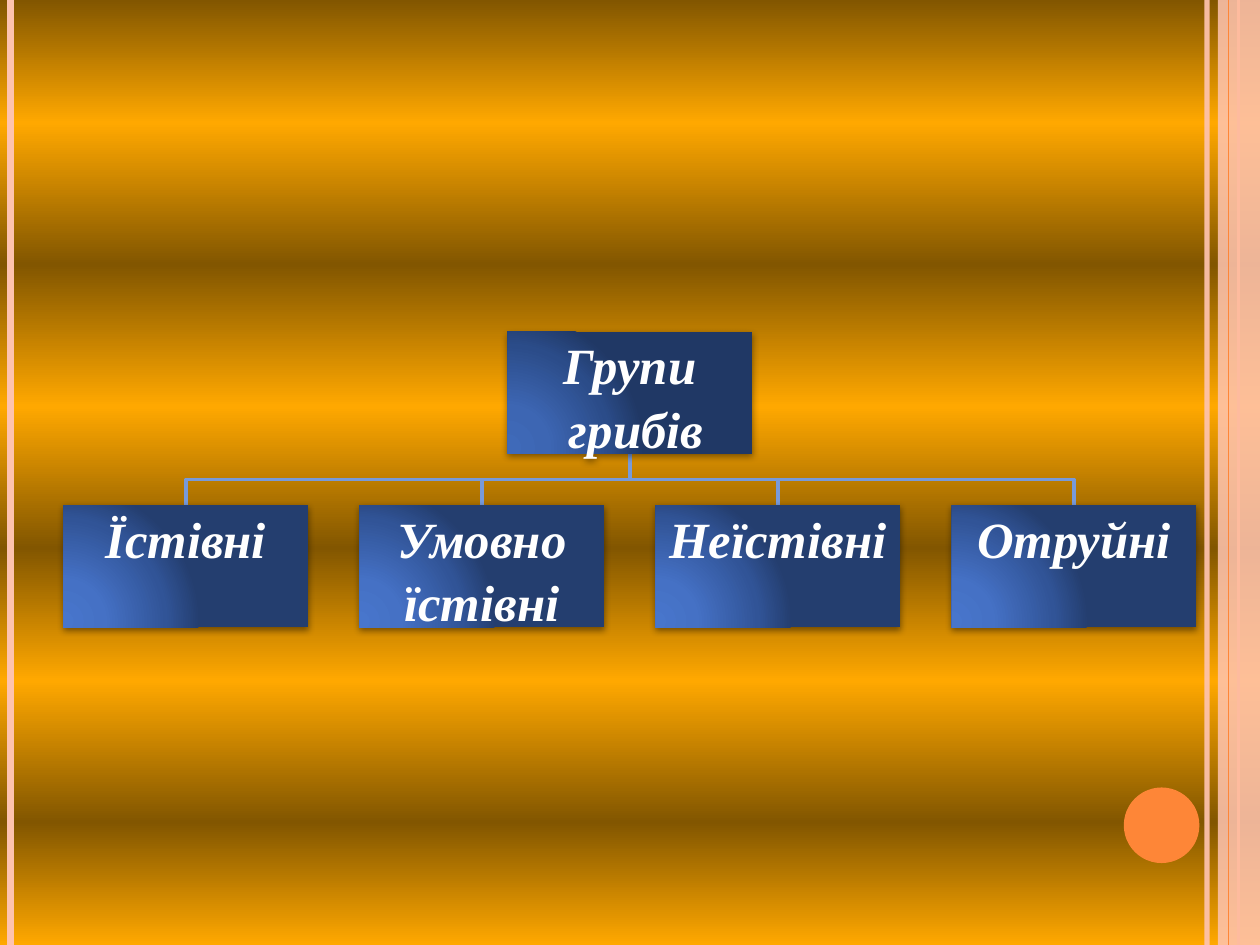
"""Build the slide that shows the groups of mushrooms as a tree."""
from dataclasses import dataclass

from lxml import etree
from pptx import Presentation
from pptx import util as u
from pptx.dml.color import RGBColor
from pptx.enum import shapes, text
from pptx.oxml import ns

PEACH = RGBColor(0xFE, 0xC3, 0xAE)
ORANGE = RGBColor(0xFE, 0x86, 0x37)
BROWN = RGBColor(0x82, 0x56, 0x00)
AMBER = RGBColor(0xFF, 0xA8, 0x00)
LINK = RGBColor(0x78, 0x9A, 0xD9)
WHITE = RGBColor(0xFF, 0xFF, 0xFF)
BLACK = RGBColor(0x00, 0x00, 0x00)
ROOT_BLUES = (RGBColor(0x3F, 0x6A, 0xB9), RGBColor(0x3D, 0x66, 0xB3),
              RGBColor(0x2B, 0x4C, 0x89), RGBColor(0x20, 0x38, 0x65))
GROUP_BLUES = (RGBColor(0x48, 0x76, 0xCC), RGBColor(0x45, 0x71, 0xC5),
               RGBColor(0x31, 0x54, 0x97), RGBColor(0x24, 0x3E, 0x6F))

PAGE_WIDTH, PAGE_HEIGHT = 720, 540
BOX_WIDTH, BOX_HEIGHT = 139.8, 69.9
ROOT_TOP, GROUP_TOP = 189.5, 288.7
MIDDLE, PITCH = PAGE_WIDTH / 2, 169.2

FONT_FORMAT = {"name": "Times New Roman", "size": u.Pt(29), "bold": True, "italic": True}
FRAME_FORMAT = {
    "word_wrap": True,
    "vertical_anchor": text.MSO_ANCHOR.TOP,
    "margin_left": u.Pt(1.4),
    "margin_right": u.Pt(1.4),
    "margin_top": u.Pt(1.4),
    "margin_bottom": u.Pt(1.4),
}


@dataclass(frozen=True)
class Rule:
    x: float
    color: RGBColor
    width: float
    opacity: int = 100


@dataclass(frozen=True)
class Node:
    lines: tuple[str, ...]
    center: float
    top: float
    blues: tuple[RGBColor, ...]


def set_formats(target, formats: dict) -> None:
    """Set each named attribute of the target."""
    for name, value in formats.items():
        setattr(target, name, value)


def add_child(parent, tag: str, **attributes):
    """Add a drawing element with its attributes."""
    values = {name: str(value) for name, value in attributes.items()}
    return etree.SubElement(parent, ns.qn(tag), values)


def set_opacity(parent, percent: int) -> None:
    """Make the solid colour inside the parent partly transparent."""
    color = parent.find(".//" + ns.qn("a:srgbClr"))
    add_child(color, "a:alpha", val=percent * 1000)


def set_gradient(parent, stops):
    """Replace the solid fill of the parent by a gradient and return it."""
    solid = parent.find(ns.qn("a:solidFill"))
    gradient = etree.Element(ns.qn("a:gradFill"), rotWithShape="1")
    stop_list = add_child(gradient, "a:gsLst")
    for position, color in stops:
        stop = add_child(stop_list, "a:gs", pos=position * 1000)
        add_child(stop, "a:srgbClr", val=color)
    parent.replace(solid, gradient)
    return gradient


def paint_background(page) -> None:
    """Fill the page with brown and amber bands."""
    page.background.fill.solid()
    page.background.fill.fore_color.rgb = BROWN
    positions = (0, 13, 28, 43, 58, 72, 87, 100)
    stops = [(position, (BROWN, AMBER)[i % 2]) for i, position in enumerate(positions)]
    gradient = set_gradient(page.element.find(".//" + ns.qn("p:bgPr")), stops)
    add_child(gradient, "a:lin", ang=5400000, scaled=0)


def draw_rule(page, rule: Rule) -> None:
    """Draw a vertical line over the full page height."""
    line = page.shapes.add_connector(
        shapes.MSO_CONNECTOR.STRAIGHT, u.Pt(rule.x), 0, u.Pt(rule.x), u.Pt(PAGE_HEIGHT))
    line.line.color.rgb = rule.color
    line.line.width = u.Pt(rule.width)
    if rule.opacity < 100:
        set_opacity(line.element.spPr, rule.opacity)
    add_child(line.element.spPr, "a:effectLst")


def draw_shape(page, kind, left: float, top: float, width: float, height: float,
               color: RGBColor):
    """Draw a plain filled shape."""
    shape = page.shapes.add_shape(kind, u.Pt(left), u.Pt(top), u.Pt(width), u.Pt(height))
    shape.shadow.inherit = False
    shape.fill.solid()
    shape.fill.fore_color.rgb = color
    shape.line.fill.background()
    return shape


def draw_link(page, root: Node, group: Node) -> None:
    """Draw the bent line from the root down to a group."""
    start = root.top + BOX_HEIGHT
    bend = (start + group.top) / 2
    points = ((root.center, bend), (group.center, bend), (group.center, group.top))
    builder = page.shapes.build_freeform(u.Pt(root.center), u.Pt(start))
    builder.add_line_segments([(u.Pt(x), u.Pt(y)) for x, y in points], close=False)
    link = builder.convert_to_shape()
    link.shadow.inherit = False
    link.fill.background()
    link.line.color.rgb = LINK
    link.line.width = u.Pt(2)


def draw_node(page, node: Node) -> None:
    """Draw a shaded box with its label."""
    box = draw_shape(page, shapes.MSO_SHAPE.RECTANGLE, node.center - BOX_WIDTH / 2,
                     node.top, BOX_WIDTH, BOX_HEIGHT, node.blues[0])
    properties = box.element.spPr
    gradient = set_gradient(properties, zip((0, 30, 75, 100), node.blues))
    circle = add_child(gradient, "a:path", path="circle")
    add_child(circle, "a:fillToRect", l=5000, t=100000, r=120000, b=10000)
    shadow = add_child(properties.find(ns.qn("a:effectLst")), "a:outerShdw",
                       blurRad=u.Pt(4), dist=u.Pt(1.6), dir=5400000, rotWithShape=0)
    add_child(shadow, "a:srgbClr", val=BLACK)
    set_opacity(shadow, 42)

    frame = box.text_frame
    set_formats(frame, FRAME_FORMAT)
    for i, line in enumerate(node.lines):
        para = frame.add_paragraph() if i else frame.paragraphs[0]
        para.alignment = text.PP_ALIGN.CENTER
        para.space_before = u.Pt(1.5 if i else 0)
        span = para.add_run()
        span.text = line
        set_formats(span.font, FONT_FORMAT)
        span.font.color.rgb = WHITE


def main() -> None:
    """Build and save the deck."""
    deck = Presentation()
    deck.slide_width, deck.slide_height = u.Pt(PAGE_WIDTH), u.Pt(PAGE_HEIGHT)
    page = deck.slides.add_slide(deck.slide_layouts[6])
    paint_background(page)

    for rule in (Rule(689.8, PEACH, 3, 93), Rule(6, PEACH, 4.5), Rule(707.8, ORANGE, 1.5)):
        draw_rule(page, rule)
    band = draw_shape(page, shapes.MSO_SHAPE.RECTANGLE, 696, 0, 24, PAGE_HEIGHT, PEACH)
    set_opacity(band.element.spPr, 87)
    draw_rule(page, Rule(702, ORANGE, 0.75))
    draw_shape(page, shapes.MSO_SHAPE.OVAL, 642.2, 450, 43.2, 43.2, ORANGE)

    root = Node(("Групи", " грибів"), MIDDLE, ROOT_TOP, ROOT_BLUES)
    labels = (("Їстівні",), ("Умовно", "їстівні"), ("Неїстівні",), ("Отруйні",))
    groups = [Node(lines, MIDDLE + (i - (len(labels) - 1) / 2) * PITCH, GROUP_TOP, GROUP_BLUES)
              for i, lines in enumerate(labels)]
    for group in groups:
        draw_link(page, root, group)
    for node in (root, *groups):
        draw_node(page, node)
    deck.save("out.pptx")


if __name__ == "__main__":
    main()
